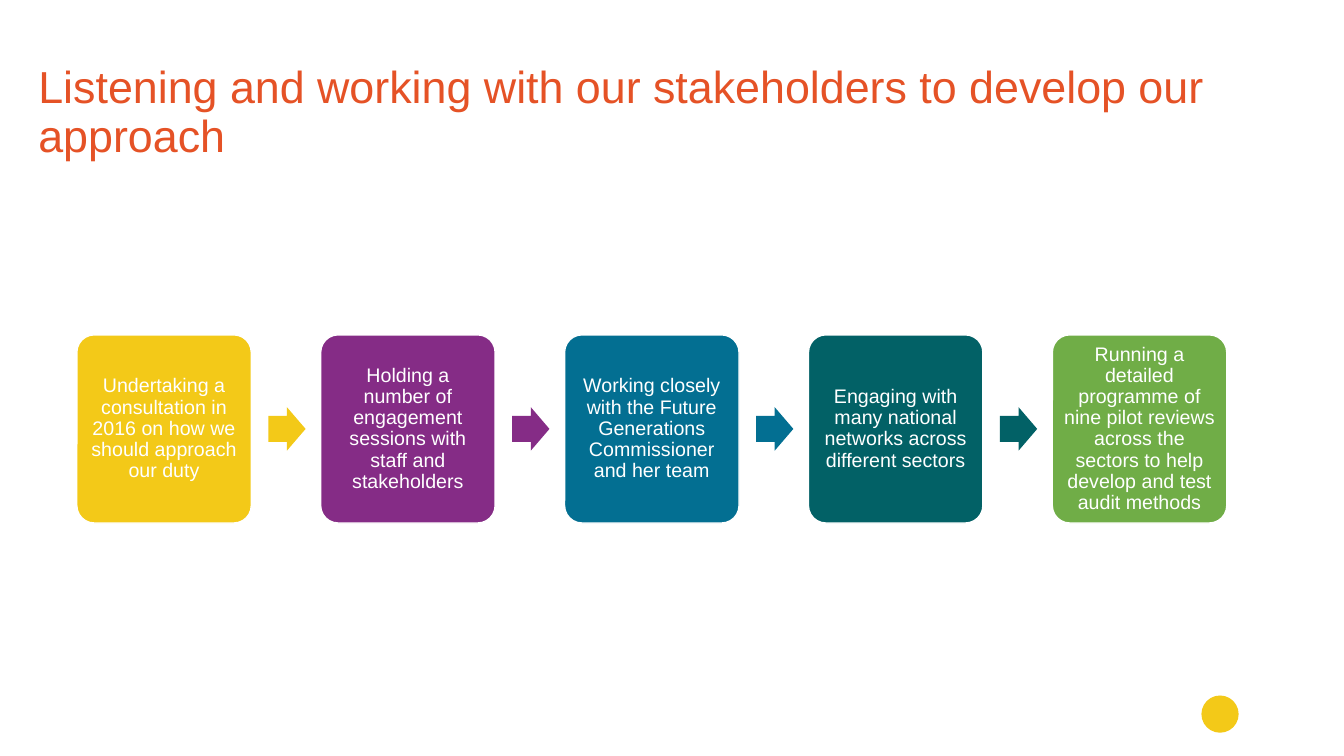
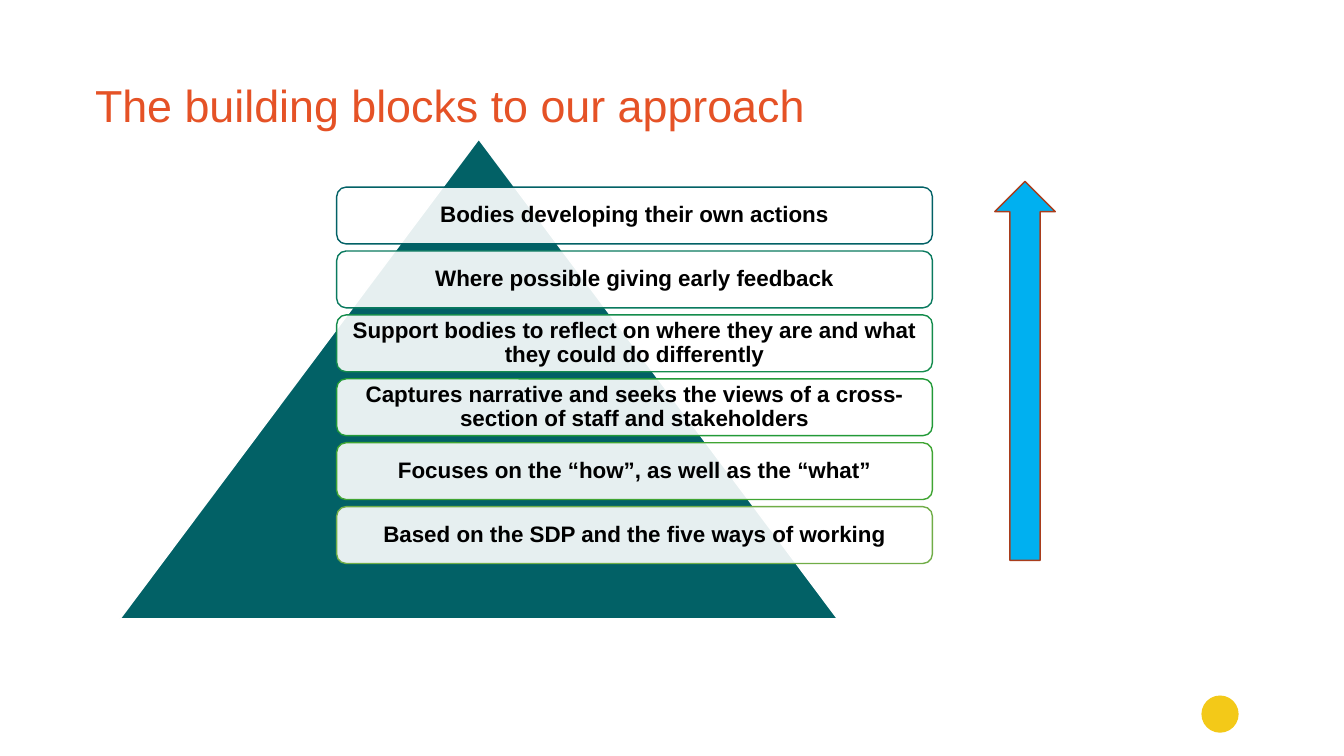
"""Two slides on stakeholder engagement: a process chain and a pyramid of building blocks."""
from dataclasses import dataclass

from lxml import etree
from pptx import Presentation
from pptx.dml.color import RGBColor
from pptx.enum.shapes import MSO_SHAPE
from pptx.enum.text import MSO_ANCHOR, PP_ALIGN
from pptx.oxml.ns import qn
from pptx.util import Pt

ROUNDED = MSO_SHAPE.ROUNDED_RECTANGLE
RIGHT_ARROW = MSO_SHAPE.RIGHT_ARROW
UP_ARROW = MSO_SHAPE.UP_ARROW
TRIANGLE = MSO_SHAPE.ISOSCELES_TRIANGLE
OVAL = MSO_SHAPE.OVAL
MIDDLE = MSO_ANCHOR.MIDDLE
LEFT, CENTER = PP_ALIGN.LEFT, PP_ALIGN.CENTER


@dataclass(frozen=True)
class Theme:
    """Colours and type sizes shared by the slides."""
    font: str = "Arial"
    title_size: int = 32
    card_size: int = 14
    bar_size: int = 16
    line_spacing: float = 0.9
    title: str = "E55226"
    white: str = "FFFFFF"
    black: str = "000000"
    yellow: str = "F3C918"
    purple: str = "852C86"
    blue: str = "036F92"
    teal: str = "026166"
    green: str = "70AD47"
    sky: str = "00B0F0"
    rust: str = "A93D1C"


THEME = Theme()

STEPS = [
    ("Undertaking a consultation in 2016 on how we should approach our duty", THEME.yellow),
    ("Holding a number of engagement sessions with staff and stakeholders", THEME.purple),
    ("Working closely with the Future Generations Commissioner and her team", THEME.blue),
    ("Engaging with many national networks across different sectors", THEME.teal),
    ("Running a detailed programme of nine pilot reviews across the sectors "
     "to help develop and test audit methods", THEME.green),
]

BLOCKS = [
    ("Bodies developing their own actions", THEME.teal),
    ("Where possible giving early feedback", "0A7A5F"),
    ("Support bodies to reflect on where they are and what they could do differently", "148C4C"),
    ("Captures narrative and seeks the views of a cross-section of staff and stakeholders",
     "229A38"),
    ("Focuses on the “how”, as well as the “what”", "40A533"),
    ("Based on the SDP and the five ways of working", THEME.green),
]


def add_figure(page, kind, box, fill, line=None, opacity=100):
    """Add a flat preset shape in a (left, top, width, height) box."""
    shape = page.shapes.add_shape(kind, *map(Pt, box))
    shape.shadow.inherit = False
    shape.fill.solid()
    shape.fill.fore_color.rgb = RGBColor.from_string(fill)
    if opacity < 100:
        colour = shape.fill._xPr.find(qn("a:solidFill"))[0]
        etree.SubElement(colour, qn("a:alpha"), val=str(opacity * 1000))
    if line:
        shape.line.color.rgb = RGBColor.from_string(line)
        shape.line.width = Pt(1)
    else:
        shape.line.fill.background()
    return shape


def write(shape, text, size, colour, insets, align=CENTER, bold=False):
    """Set one paragraph of styled text, with insets as left, top, right, bottom."""
    frame = shape.text_frame
    frame.word_wrap = True
    frame.vertical_anchor = MIDDLE
    (frame.margin_left, frame.margin_top,
     frame.margin_right, frame.margin_bottom) = map(Pt, insets)
    frame.text = text
    para = frame.paragraphs[0]
    para.alignment = align
    para.line_spacing = THEME.line_spacing
    for span in para.runs:
        span.font.name = THEME.font
        span.font.size = Pt(size)
        span.font.bold = bold
        span.font.color.rgb = RGBColor.from_string(colour)


def add_page(deck, title, left, top):
    """Add a blank slide with the corner dot and a title."""
    page = deck.slides.add_slide(deck.slide_layouts[6])
    add_figure(page, OVAL, (858.2, 496.8, 26.6, 26.6), THEME.yellow)
    box = page.shapes.add_textbox(Pt(left), Pt(top), Pt(904.3), Pt(104.4))
    write(box, title, THEME.title_size, THEME.title, (0, 3.6, 7.2, 3.6), LEFT)
    return page


def add_process(page, box, steps):
    """Spread coloured cards across the box, with an arrow after each but the last."""
    left, top, width, height = box
    card_width, arrow_width, arrow_height, arrow_gap = 124.6, 26.6, 31, 12.2
    pitch = (width - card_width) / (len(steps) - 1)
    for index, (text, colour) in enumerate(steps):
        card_left = left + index * pitch
        card = add_figure(page, ROUNDED, (card_left, top, card_width, height),
                          colour, THEME.white)
        card.adjustments[0] = 0.1
        write(card, text, THEME.card_size, THEME.white, (4.2,) * 4)
        if index < len(steps) - 1:
            arrow = add_figure(page, RIGHT_ARROW,
                               (card_left + card_width + arrow_gap,
                                top + (height - arrow_height) / 2,
                                arrow_width, arrow_height), colour)
            arrow.adjustments[0] = 0.6


def add_pyramid(page, box, blocks):
    """Draw a triangle filling the box and stack translucent bars over it."""
    left, top, width, height = box
    add_figure(page, TRIANGLE, box, THEME.teal, THEME.white)
    bar_left, bar_top = left + 0.3 * width + 1, top + 0.1 * height
    bar_width, bar_height, pitch = 425.5, 40.6, 45.65
    for index, (text, colour) in enumerate(blocks):
        bar = add_figure(page, ROUNDED,
                         (bar_left, bar_top + index * pitch, bar_width, bar_height),
                         THEME.white, colour, opacity=90)
        write(bar, text, THEME.bar_size, THEME.black, (5,) * 4, bold=True)


def main():
    """Build and save the deck."""
    deck = Presentation()
    deck.slide_width, deck.slide_height = Pt(960), Pt(540)

    page = add_page(
        deck, "Listening and working with our stakeholders to develop our approach", 27.4, 28.8)
    add_process(page, (54.9, 239.2, 821.4, 134.4), STEPS)

    page = add_page(deck, "The building blocks to our approach", 67.9, 25.2)
    add_pyramid(page, (85.7, 99.4, 512.6, 342.7), BLOCKS)
    add_figure(page, UP_ARROW, (710.6, 129.6, 43.2, 270.7), THEME.sky, THEME.rust)

    deck.save("out.pptx")


if __name__ == "__main__":
    main()
